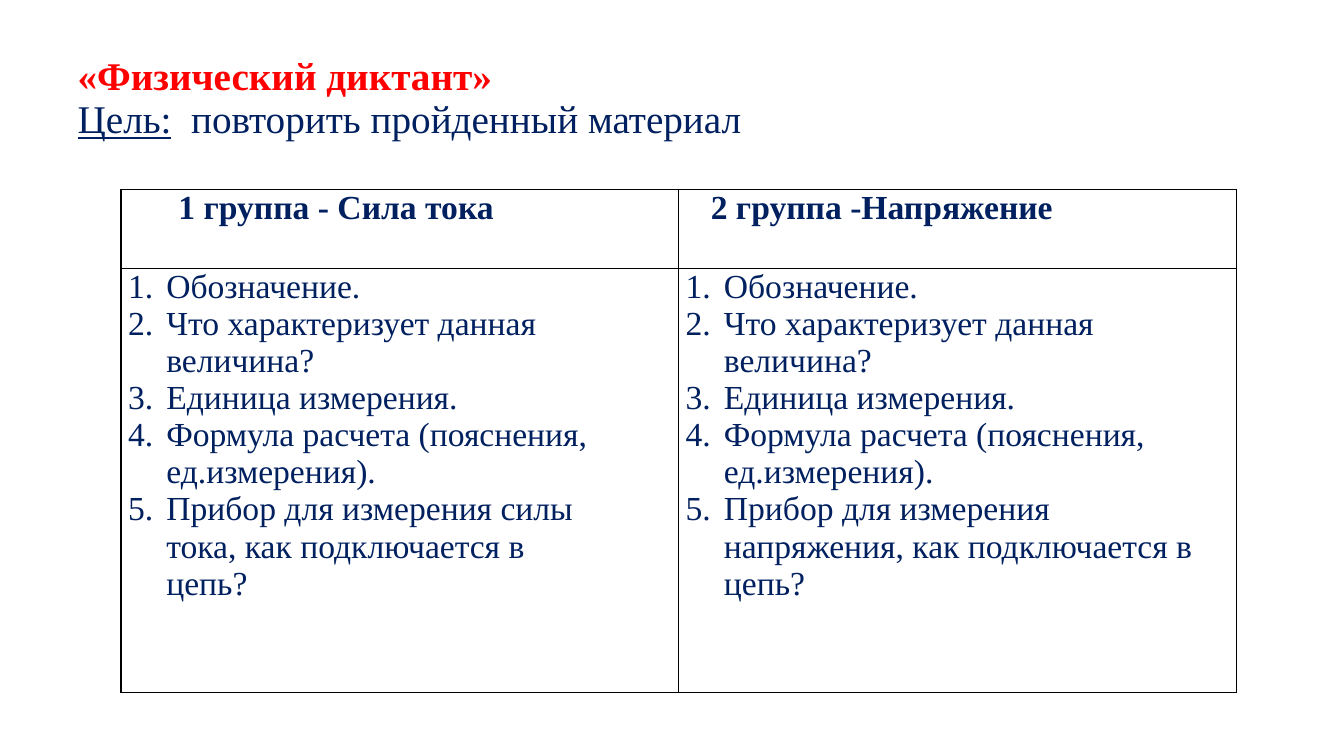
from dataclasses import dataclass

from lxml import etree
from pptx import Presentation
from pptx import util as u
from pptx.dml.color import RGBColor
from pptx.oxml import ns


@dataclass(frozen=True)
class Theme:
    font: str = "Times New Roman"
    navy: str = "002060"
    red: str = "FF0000"
    border: str = "000000"
    heading_size: int = 28
    table_size: int = 24


theme = Theme()


def write(paragraph, wording, size=theme.table_size, color=theme.navy,
          bold=False, underline=False, left=0, hanging=0, numbered=False):
    """Add a formatted run and set the indents of its paragraph."""
    run = paragraph.add_run()
    run.text = wording
    run.font.name = theme.font
    run.font.size = u.Pt(size)
    run.font.bold = bold
    run.font.underline = underline
    run.font.color.rgb = RGBColor.from_string(color)
    layout = paragraph._p.get_or_add_pPr()
    layout.set("marL", str(u.Inches(left)))
    layout.set("indent", str(u.Inches(-hanging)))
    if numbered:
        etree.SubElement(layout, ns.qn("a:buFont"), typeface="+mj-lt")
        etree.SubElement(layout, ns.qn("a:buAutoNum"), type="arabicPeriod")


def plain_table(left, top, widths, heights, inset, bordered=False):
    """Add an unfilled table with optional thin borders."""
    grid = slide.shapes.add_table(
        len(heights), len(widths), u.Inches(left), u.Inches(top),
        u.Inches(sum(widths)), u.Inches(sum(heights))).table
    grid.first_row = grid.horz_banding = False
    for column, width in zip(grid.columns, widths):
        column.width = u.Inches(width)
    for row, height in zip(grid.rows, heights):
        row.height = u.Inches(height)
    for cell in grid.iter_cells():
        cell.margin_left = cell.margin_right = u.Inches(inset)
        cell.margin_top = cell.margin_bottom = 0
        if bordered:
            for side in ("lnL", "lnR", "lnT", "lnB"):
                line = etree.SubElement(cell._tc.get_or_add_tcPr(),
                                        ns.qn(f"a:{side}"), w=str(u.Pt(1)))
                ink = etree.SubElement(line, ns.qn("a:solidFill"))
                etree.SubElement(ink, ns.qn("a:srgbClr"), val=theme.border)
        cell.fill.background()
    return grid


prs = Presentation()
prs.slide_width, prs.slide_height = u.Inches(13.33), u.Inches(7.5)
slide = prs.slides.add_slide(prs.slide_layouts[6])

# Heading and lesson goal
heading = plain_table(0.65, 0.55, [11.47], [1.04], 0.12).cell(0, 0).text_frame
write(heading.paragraphs[0], "«Физический диктант»",
      size=theme.heading_size, color=theme.red, bold=True)
goal = heading.add_paragraph()
write(goal, "Цель:", size=theme.heading_size, underline=True)
write(goal, "  повторить пройденный материал", size=theme.heading_size)

# Questions for the two groups: title, title indent, quantity, right margin
groups = [
    ("1 группа - Сила тока", 0.5, "силы тока", 0.75),
    ("2 группа -Напряжение", 0.25, "напряжения", 0.07),
]
questions = [
    "Обозначение.",
    "Что характеризует данная величина?",
    "Единица измерения.",
    "Формула расчета (пояснения, ед.измерения).",
    "Прибор для измерения {}, как подключается в цепь?",
]
dictation = plain_table(1.2, 1.88, [5.53, 5.53], [0.78, 4.21], 0.07, bordered=True)
for index, (title, indent, quantity, right_margin) in enumerate(groups):
    write(dictation.cell(0, index).text_frame.paragraphs[0], title,
          bold=True, left=indent)
    tasks = dictation.cell(1, index)
    tasks.margin_right = u.Inches(right_margin)
    for number, question in enumerate(questions):
        frame = tasks.text_frame
        paragraph = frame.add_paragraph() if number else frame.paragraphs[0]
        write(paragraph, question.format(quantity),
              left=0.38, hanging=0.38, numbered=True)

prs.save("out.pptx")
